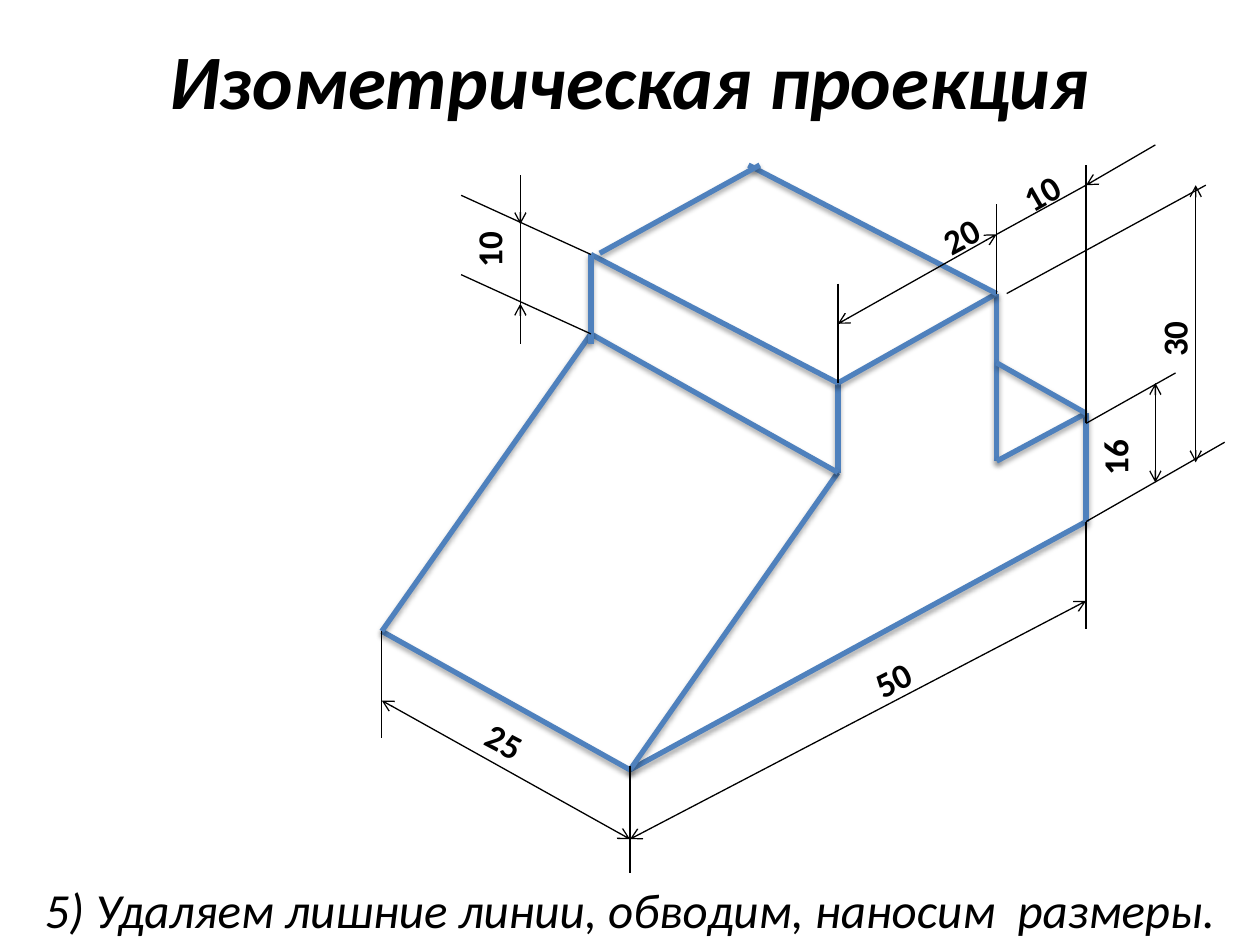
import pptx
import pptx.util
import pptx.dml.color
import pptx.enum.shapes
import pptx.enum.text
import pptx.oxml
import pptx.oxml.ns
from dataclasses import dataclass

PX = 9144
PAGE_SIZE = (1000, 750)


@dataclass(frozen=True)
class Theme:
    font: str = "Calibri"
    ink: str = "000000"
    outline: str = "4F81BD"
    outline_width: float = 3
    dimension_width: float = 0.75
    title_size: int = 44
    caption_size: int = 28
    number_size: int = 20


THEME = Theme()

TITLE = "Изометрическая проекция"
CAPTION = "5) Удаляем лишние линии, обводим, наносим  размеры."

FRONT_CORNER, RIGHT_CORNER, LEFT_CORNER = (500, 611), (862, 414), (303, 501)
SLOPE_RIGHT, SLOPE_LEFT = (665, 375), (469, 265)
TOP_FRONT, TOP_LEFT, TOP_RIGHT = (665, 304), (469, 202), (791, 233)
STEP_INNER, STEP_OUTER, STEP_BACK = (791, 366), (862, 328), (791, 288)

OUTLINE = [
    (FRONT_CORNER, RIGHT_CORNER),
    (FRONT_CORNER, SLOPE_RIGHT),
    (RIGHT_CORNER, STEP_OUTER),
    (STEP_INNER, TOP_RIGHT),
    (SLOPE_RIGHT, TOP_FRONT),
    (TOP_FRONT, TOP_RIGHT),
    (STEP_INNER, STEP_OUTER),
    (FRONT_CORNER, LEFT_CORNER),
    (SLOPE_RIGHT, SLOPE_LEFT),
    (TOP_FRONT, TOP_LEFT),
    (TOP_RIGHT, (594, 131)),
    (STEP_OUTER, STEP_BACK),
    (LEFT_CORNER, SLOPE_LEFT),
    ((469, 273), TOP_LEFT),
    ((476, 201), (603, 131)),
]

EXTENSIONS = [
    ((791, 162), TOP_RIGHT),
    ((862, 131), (862, 336)),
    ((665, 225), TOP_FRONT),
    ((413, 178), (413, 241)),
    ((791, 186), (862, 147)),
    ((799, 233), (957, 147)),
    ((366, 218), SLOPE_LEFT),
    ((366, 155), TOP_LEFT),
    (RIGHT_CORNER, (972, 351)),
    ((862, 336), (933, 296)),
    ((500, 608), (500, 693)),
    (RIGHT_CORNER, (862, 499)),
    (LEFT_CORNER, (303, 586)),
]

BOTH, START, END = ("headEnd", "tailEnd"), ("headEnd",), ("tailEnd",)
DIMENSIONS = [
    ((862, 147), (917, 115), START),
    ((917, 304), (917, 383), BOTH),
    ((949, 147), (949, 367), BOTH),
    ((500, 666), (862, 477), BOTH),
    ((303, 556), (500, 666), BOTH),
    ((665, 257), (791, 186), BOTH),
    ((413, 139), (413, 178), END),
    ((413, 241), (413, 273), START),
]

NUMBER_BOX = (55, 44)
NUMBERS = [
    ("20", 735, 165, 331.7),
    ("10", 799, 131, 330.1),
    ("50", 681, 517, 333.3),
    ("16", 857, 341, 270),
    ("30", 904, 247, 270),
    ("25", 373, 566, 27.8),
    ("10", 360, 176, 270),
]


def px(value):
    return pptx.util.Emu(value * PX)


def color(value):
    return pptx.dml.color.RGBColor.from_string(value)


def effects(shadow):
    namespace = pptx.oxml.ns.nsdecls("a")
    content = ""
    if shadow:
        content = (
            '<a:outerShdw blurRad="39370" dist="22860" dir="5400000" rotWithShape="0">'
            f'<a:srgbClr val="{THEME.ink}"><a:alpha val="35000"/></a:srgbClr></a:outerShdw>'
        )
    return pptx.oxml.parse_xml(f"<a:effectLst {namespace}>{content}</a:effectLst>")


def add_line(page, start, end, stroke, width, arrows=(), shadow=False):
    kind = pptx.enum.shapes.MSO_CONNECTOR.STRAIGHT
    line = page.shapes.add_connector(kind, *map(px, start + end))
    line.line.color.rgb = color(stroke)
    line.line.width = pptx.util.Pt(width)
    for arrow in arrows:
        pptx.oxml.ns.qn("a:ln")
        tip = pptx.oxml.parse_xml(
            f'<a:{arrow} {pptx.oxml.ns.nsdecls("a")} type="arrow"/>'
        )
        line.line._get_or_add_ln().append(tip)
    line._element.spPr.append(effects(shadow))


def add_text(page, text, frame, size, bold=False, italic=False, rotation=0):
    box = page.shapes.add_textbox(*map(px, frame))
    box.rotation = rotation
    box.text_frame.word_wrap = True
    box.text_frame.vertical_anchor = pptx.enum.text.MSO_ANCHOR.MIDDLE
    box.text_frame.text = text
    para = box.text_frame.paragraphs[0]
    para.alignment = pptx.enum.text.PP_ALIGN.CENTER
    span = para.runs[0]
    span.font.name = THEME.font
    span.font.size = pptx.util.Pt(size)
    span.font.bold = bold
    span.font.italic = italic
    span.font.color.rgb = color(THEME.ink)


def main():
    deck = pptx.Presentation()
    deck.slide_width, deck.slide_height = map(px, PAGE_SIZE)
    page = deck.slides.add_slide(deck.slide_layouts[6])

    add_text(page, TITLE, (0, 0, 1000, 125), THEME.title_size, bold=True, italic=True)
    for start, end in OUTLINE:
        add_line(page, start, end, THEME.outline, THEME.outline_width, shadow=True)
    add_text(page, CAPTION, (0, 693, 1000, 57), THEME.caption_size, italic=True)
    for start, end in EXTENSIONS:
        add_line(page, start, end, THEME.ink, THEME.dimension_width)
    for start, end, arrows in DIMENSIONS:
        add_line(page, start, end, THEME.ink, THEME.dimension_width, arrows)
    for text, left, top, rotation in NUMBERS:
        frame = (left, top, *NUMBER_BOX)
        add_text(page, text, frame, THEME.number_size, bold=True, rotation=rotation)

    deck.save("out.pptx")


if __name__ == "__main__":
    main()
